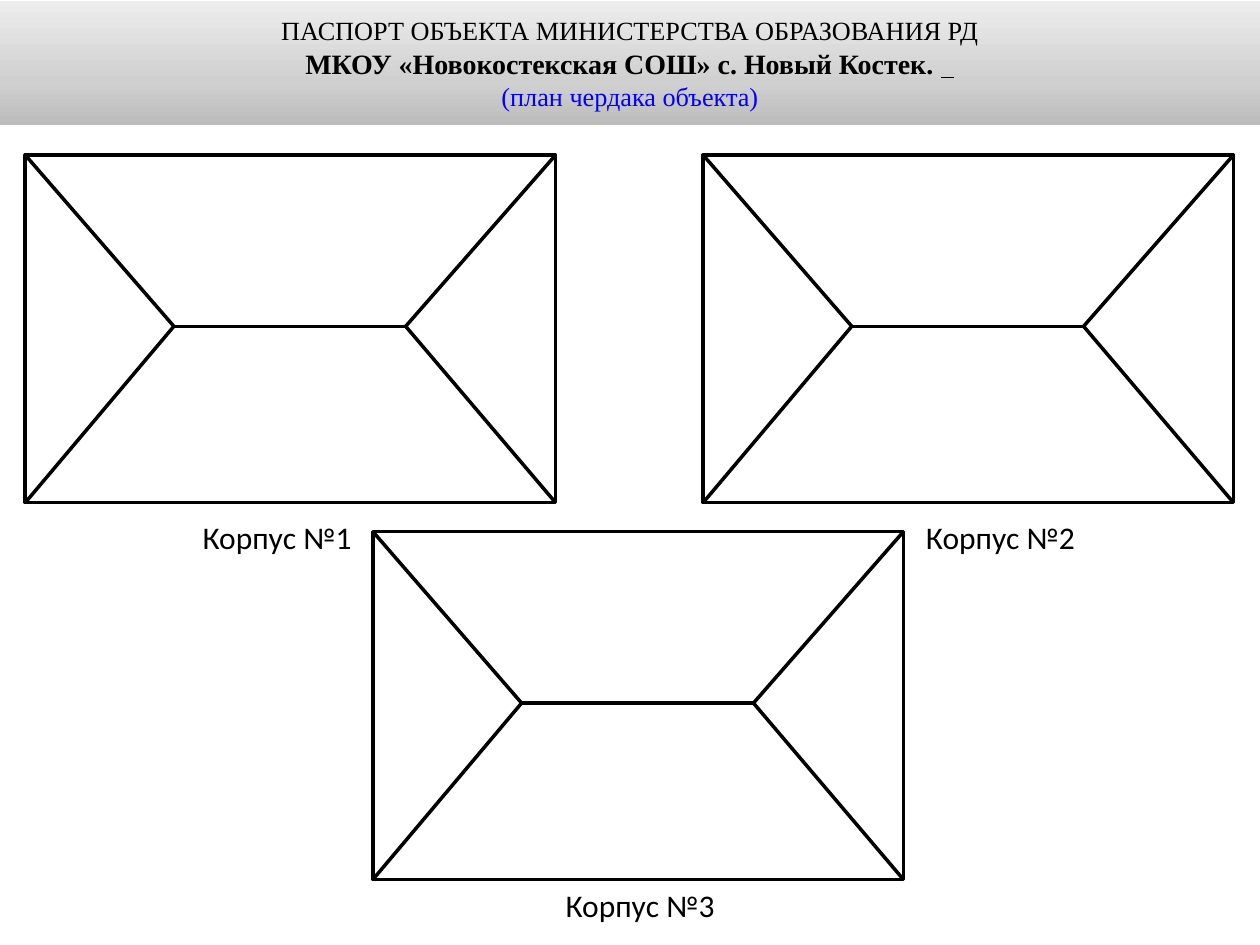
import copy

import pptx
import pptx.dml.color
import pptx.enum.shapes
import pptx.enum.text
import pptx.oxml.ns
import pptx.util

COLORS = {"ink": "000000", "blue": "0000FF", "paper": "FFFFFF",
          "low": "BCBCBC", "mid": "D0D0D0", "high": "EDEDED"}
RECT = pptx.enum.shapes.MSO_SHAPE.RECTANGLE
LINE = pptx.enum.shapes.MSO_CONNECTOR.STRAIGHT

deck = pptx.Presentation()
deck.slide_width = pptx.util.Inches(10)
deck.slide_height = pptx.util.Inches(7.5)
slide = deck.slides.add_slide(deck.slide_layouts[6])
col = deck.slide_width / 100
row = deck.slide_height / 75


def tint(name):
    return pptx.dml.color.RGBColor.from_string(COLORS[name])


def write(para, text, size=18, face="Calibri", color="ink", bold=False, under=False):
    run = para.add_run()
    run.text = text
    font = run.font
    font.size = pptx.util.Pt(size)
    font.name = face
    font.bold = bold
    font.underline = under
    font.color.rgb = tint(color)


# Header band with a three-stop gradient
band = slide.shapes.add_shape(RECT, 0, int(0.1 * row), int(100 * col), int(9.8 * row))
band.shadow.inherit = False
band.line.fill.background()
band.fill.gradient()
band.fill.gradient_angle = 90
stops = band._element.spPr.find(".//" + pptx.oxml.ns.qn("a:gsLst"))
stops.insert(1, copy.deepcopy(stops[0]))
for stop, (spot, name) in zip(band.fill.gradient_stops,
                              [(0, "low"), (0.35, "mid"), (1, "high")]):
    stop.position = spot
    stop.color.rgb = tint(name)

frame = band.text_frame
frame.word_wrap = True
frame.vertical_anchor = pptx.enum.text.MSO_ANCHOR.MIDDLE
serif = "Times New Roman"
heads = [
    [("ПАСПОРТ ОБЪЕКТА МИНИСТЕРСТВА ОБРАЗОВАНИЯ РД", {"size": 15})],
    [("МКОУ «Новокостекская СОШ» с. Новый Костек. ", {"size": 16, "bold": True}),
     ("  ", {"size": 16, "under": True})],
    [("(план чердака объекта)", {"size": 15, "color": "blue"})],
]
for num, runs in enumerate(heads):
    para = frame.add_paragraph() if num else frame.paragraphs[0]
    para.alignment = pptx.enum.text.PP_ALIGN.CENTER
    for text, style in runs:
        write(para, text, face=serif, **style)

# Hipped roofs: outline, ridge and four hips, measured from the top left corner
wide, high = 42.1, 27.6
west, east = (11.8, 13.6), (30.2, 13.6)
edges = [(west, east), (east, (wide, 0)), ((wide, high), east),
         (west, (0, 0)), ((0, high), west)]
for left, top in [(55.8, 12.3), (2, 12.3), (29.6, 42.2)]:
    roof = slide.shapes.add_group_shape()
    wall = roof.shapes.add_shape(RECT, int(left * col), int(top * row),
                                 int(wide * col), int(high * row))
    wall.shadow.inherit = False
    wall.fill.solid()
    wall.fill.fore_color.rgb = tint("paper")
    parts = [wall]
    for (x1, y1), (x2, y2) in edges:
        edge = roof.shapes.add_connector(
            LINE, int((left + x1) * col), int((top + y1) * row),
            int((left + x2) * col), int((top + y2) * row))
        edge._element.spPr.append(pptx.oxml.parse_xml(
            "<a:effectLst %s/>" % pptx.oxml.ns.nsdecls("a")))
        parts.append(edge)
    for part in parts:
        part.line.color.rgb = tint("ink")
        part.line.width = pptx.util.Pt(2)

# Building labels
for text, left, top, span, wrap in [("Корпус №1", 15.1, 40.6, 14, False),
                                    ("Корпус №2", 72.5, 40.6, 14.5, True),
                                    ("Корпус №3", 43.9, 69.8, 18.5, True)]:
    label = slide.shapes.add_textbox(int(left * col), int(top * row),
                                     int(span * col), int(4 * row))
    label.text_frame.word_wrap = wrap
    label.text_frame.auto_size = pptx.enum.text.MSO_AUTO_SIZE.SHAPE_TO_FIT_TEXT
    write(label.text_frame.paragraphs[0], text)

deck.save("out.pptx")
